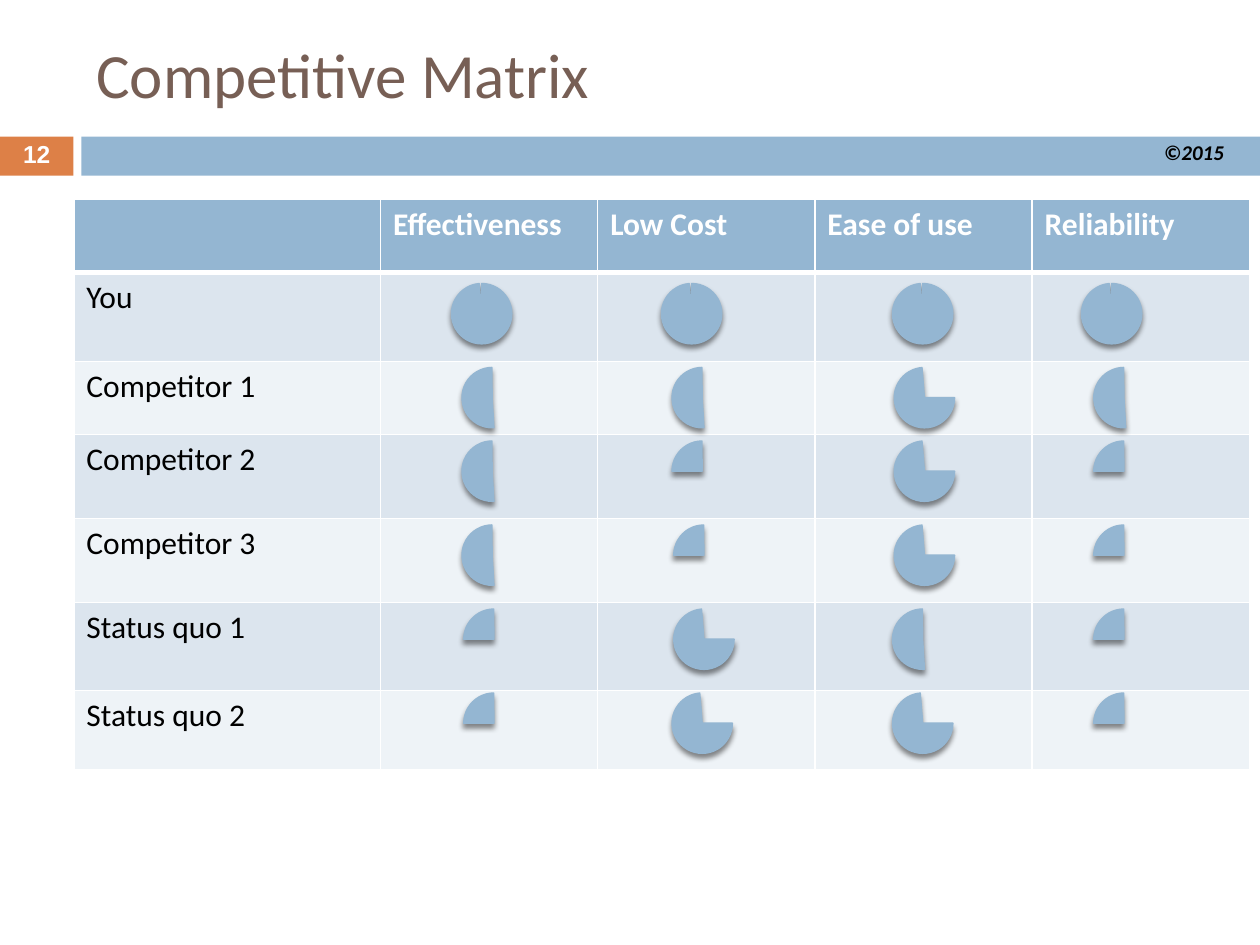
"""Build the competitive matrix slide with pie ratings over a table."""
from dataclasses import dataclass

from lxml import etree
from pptx import Presentation
from pptx.dml.color import RGBColor
from pptx.enum.shapes import MSO_SHAPE
from pptx.enum.text import MSO_ANCHOR, PP_ALIGN
from pptx.oxml.ns import qn
from pptx.util import Pt

RECTANGLE, PIE = MSO_SHAPE.RECTANGLE, MSO_SHAPE.PIE
TOP, MIDDLE = MSO_ANCHOR.TOP, MSO_ANCHOR.MIDDLE
LEFT, CENTER = PP_ALIGN.LEFT, PP_ALIGN.CENTER

BLUE, ORANGE, BROWN = "94B6D2", "DD8047", "775F55"
WHITE, BLACK = "FFFFFF", "000000"
BANDS = ("DCE5EE", "EEF3F7")

PIE_SIZE = 34.5
DEGREE = 0.6
FULL, THREE_QUARTERS = (270.32, 265.36), (0, 265.36)
HALF, QUARTER = (86.65, 269.43), (179.85, 269.43)


@dataclass(frozen=True)
class Style:
    size: float
    color: str
    font: str = "Calibri"
    bold: bool = False
    italic: bool = False


@dataclass(frozen=True)
class Label:
    text: str
    box: tuple
    style: Style
    anchor: object = TOP
    align: object = LEFT
    wrap: bool = True
    line_spacing: float = 1.0
    space_before: float = 0


@dataclass(frozen=True)
class Band:
    box: tuple
    color: str


@dataclass(frozen=True)
class Rating:
    level: tuple
    left: float


@dataclass(frozen=True)
class Option:
    name: str
    height: float
    pie_top: float
    ratings: tuple


def ratings(levels: tuple, lefts: tuple) -> tuple:
    """Pair the levels of one row with their left edges."""
    return tuple(Rating(level, left) for level, left in zip(levels, lefts))


CRITERIA = ("Effectiveness", "Low Cost", "Ease of use", "Reliability")
HEADER_HEIGHT, NAME_WIDTH, CRITERION_WIDTH = 41.7, 175.2, 124.15
OPTIONS = (
    Option("You", 50.9, 162, ratings((FULL,) * 4, (258, 378, 510, 618))),
    Option("Competitor 1", 41.7, 210,
           ratings((HALF, HALF, THREE_QUARTERS, HALF), (264, 384, 511, 625))),
    Option("Competitor 2", 48, 252,
           ratings((HALF, QUARTER, THREE_QUARTERS, QUARTER), (264, 384, 511, 625))),
    Option("Competitor 3", 48, 300,
           ratings((HALF, QUARTER, THREE_QUARTERS, QUARTER), (264, 385, 511, 625))),
    Option("Status quo 1", 50.3, 348,
           ratings((QUARTER, THREE_QUARTERS, HALF, QUARTER), (265, 385, 510, 625))),
    Option("Status quo 2", 45.1, 396,
           ratings((QUARTER, THREE_QUARTERS, THREE_QUARTERS, QUARTER), (265, 384, 510, 625))),
)
BAND_SHAPES = (
    Band((0, 78, 42, 22.3), ORANGE),
    Band((46.5, 78, 673.5, 22.3), BLUE),
)
LABELS = (
    Label("Competitive Matrix", (48, 18, 642, 48), Style(36, BROWN), anchor=MIDDLE),
    Label("12", (0, 80, 42, 19.5), Style(14, WHITE, "Arial", bold=True),
          anchor=MIDDLE, align=CENTER, line_spacing=0.7, space_before=2.8),
    Label("©2015", (658, 79, 51, 19.5), Style(12, BLACK, bold=True, italic=True),
          wrap=False, line_spacing=0.8, space_before=2.4),
)


def rgb(value: str) -> RGBColor:
    """Turn a hex string into a colour."""
    return RGBColor.from_string(value)


def paint(target, color: str) -> None:
    """Give a shape or cell a solid fill."""
    target.fill.solid()
    target.fill.fore_color.rgb = rgb(color)


def add_run(paragraph, text: str, style: Style) -> None:
    """Append one styled run."""
    run = paragraph.add_run()
    run.text = text
    font = run.font
    font.name, font.size = style.font, Pt(style.size)
    font.bold, font.italic = style.bold, style.italic
    font.color.rgb = rgb(style.color)


def add_label(slide, label: Label) -> None:
    """Place a text box with one line of text."""
    frame = slide.shapes.add_textbox(*map(Pt, label.box)).text_frame
    frame.word_wrap = label.wrap
    frame.vertical_anchor = label.anchor
    paragraph = frame.paragraphs[0]
    paragraph.alignment = label.align
    paragraph.line_spacing = label.line_spacing
    paragraph.space_before = Pt(label.space_before)
    add_run(paragraph, label.text, label.style)


def add_band(slide, band: Band) -> None:
    """Place a plain rectangle of the header strip."""
    strip = slide.shapes.add_shape(RECTANGLE, *map(Pt, band.box))
    strip.shadow.inherit = False
    paint(strip, band.color)
    strip.line.fill.background()


def add_color(parent, color: str):
    """Append an XML colour and return it."""
    return etree.SubElement(parent, qn("a:srgbClr"), val=color)


def add_pie(slide, rating: Rating, top: float) -> None:
    """Place one pie rating with a soft shadow below it."""
    box = (rating.left, top, PIE_SIZE, PIE_SIZE)
    pie = slide.shapes.add_shape(PIE, *map(Pt, box))
    for index, angle in enumerate(rating.level):
        pie.adjustments[index] = angle * DEGREE
    paint(pie, BLUE)
    pie.line.color.rgb = rgb(BLUE)
    pie.line.width = Pt(0.79)
    pie.shadow.inherit = False
    effects = pie.element.spPr.find(qn("a:effectLst"))
    shadow = etree.SubElement(effects, qn("a:outerShdw"), blurRad=str(Pt(3)),
                              dist=str(Pt(2.4)), dir="5400000", rotWithShape="0")
    etree.SubElement(add_color(shadow, BLACK), qn("a:alpha"), val="45000")


def add_borders(cell, top: float, bottom: float) -> None:
    """Draw white borders round a cell."""
    properties = cell._tc.get_or_add_tcPr()
    for side, width in (("L", 1), ("R", 1), ("T", top), ("B", bottom)):
        border = etree.SubElement(properties, qn(f"a:ln{side}"), w=str(Pt(width)))
        add_color(etree.SubElement(border, qn("a:solidFill")), WHITE)


def add_matrix(slide) -> None:
    """Place the table of options and criteria."""
    heights = (HEADER_HEIGHT, *(option.height for option in OPTIONS))
    widths = (NAME_WIDTH, *(CRITERION_WIDTH for _ in CRITERIA))
    box = (42.2, 114, sum(widths), sum(heights))
    matrix = slide.shapes.add_table(len(heights), len(widths), *map(Pt, box)).table
    for column, width in zip(matrix.columns, widths):
        column.width = Pt(width)
    for row, height in zip(matrix.rows, heights):
        row.height = Pt(height)
    names = (("", *CRITERIA), *((option.name,) for option in OPTIONS))
    for row_index, row in enumerate(matrix.rows):
        is_header = row_index == 0
        style = Style(18, WHITE if is_header else BLACK, bold=is_header)
        for cell in row.cells:
            add_borders(cell, 3 if row_index == 1 else 1, 3 if is_header else 1)
            paint(cell, BLUE if is_header else BANDS[(row_index - 1) % 2])
        for cell, name in zip(row.cells, names[row_index]):
            if name:
                add_run(cell.text_frame.paragraphs[0], name, style)


def main() -> None:
    """Build and save the slide."""
    deck = Presentation()
    deck.slide_width, deck.slide_height = Pt(720), Pt(540)
    slide = deck.slides.add_slide(deck.slide_layouts[6])
    for band in BAND_SHAPES:
        add_band(slide, band)
    for label in LABELS:
        add_label(slide, label)
    add_matrix(slide)
    for option in OPTIONS:
        for rating in option.ratings:
            add_pie(slide, rating, option.pie_top)
    deck.save("out.pptx")


if __name__ == "__main__":
    main()
